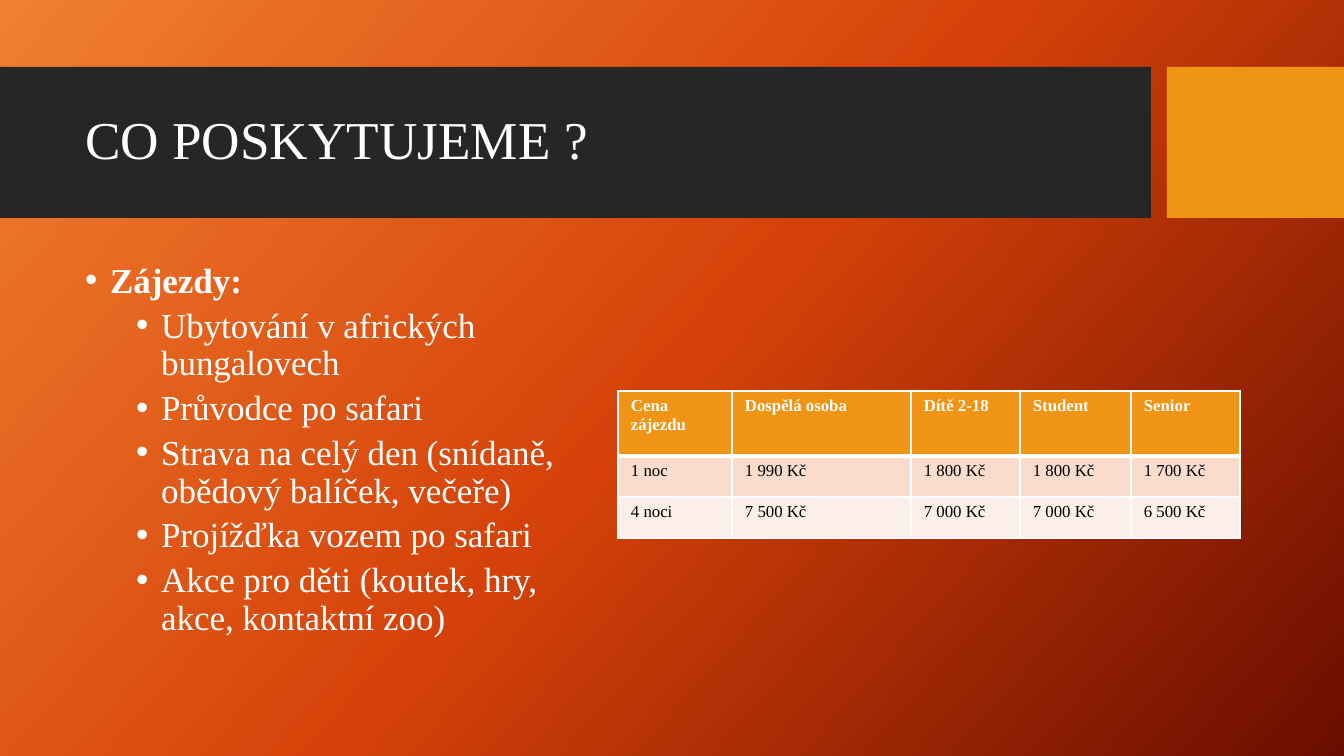
from copy import deepcopy

from lxml import etree
from pptx import Presentation
from pptx.dml.color import RGBColor
from pptx.enum.shapes import MSO_SHAPE
from pptx.enum.text import MSO_ANCHOR, MSO_AUTO_SIZE, PP_ALIGN
from pptx.oxml.ns import qn
from pptx.util import Pt

RECTANGLE = MSO_SHAPE.RECTANGLE
MIDDLE, TOP = MSO_ANCHOR.MIDDLE, MSO_ANCHOR.TOP
LEFT = PP_ALIGN.LEFT
NO_FIT = MSO_AUTO_SIZE.NONE

EMU_PER_PX = 914400 / 100.8
FONT = "Times New Roman"
WHITE, BLACK, ORANGE, CHARCOAL = "FFFFFF", "000000", "F09415", "262626"


def px(*lengths):
    emu = [round(length * EMU_PER_PX) for length in lengths]
    return emu if len(emu) > 1 else emu[0]


def style(paragraph, size, color, bold=False):
    paragraph.alignment = LEFT
    for run in paragraph.runs:
        run.font.name = FONT
        run.font.size = Pt(size)
        run.font.bold = bold
        run.font.color.rgb = RGBColor.from_string(color)


presentation = Presentation()
presentation.slide_width, presentation.slide_height = px(1344, 756)
slide = presentation.slides.add_slide(presentation.slide_layouts[1])

# Background gradient
background = slide.background.fill
background.gradient()
background.gradient_angle = 360 - 42
stop_list = slide.element.find(".//" + qn("a:gsLst"))
stop_list.append(deepcopy(stop_list[0]))
gradient = [(0, "F18031"), (0.5, "D54209"), (1, "6A0D00")]
for stop, (position, color) in zip(background.gradient_stops, gradient):
    stop.position = position
    stop.color.rgb = RGBColor.from_string(color)

# Title band and accent block, placed behind the text
for index, (left, width, color) in enumerate([(0, 1151, CHARCOAL), (1167, 177, ORANGE)]):
    band = slide.shapes.add_shape(RECTANGLE, *px(left, 67, width, 151))
    band.shadow.inherit = False
    band.fill.solid()
    band.fill.fore_color.rgb = RGBColor.from_string(color)
    band.line.fill.background()
    slide.shapes.element.insert(2 + index, band.element)

# Title
title = slide.shapes.title
title.left, title.top, title.width, title.height = px(75, 83, 1059, 119)
title.text_frame.text = "CO POSKYTUJEME ?"
title.text_frame.vertical_anchor = MIDDLE
title.text_frame.auto_size = NO_FIT
title.text_frame.paragraphs[0].line_spacing = 0.9
style(title.text_frame.paragraphs[0], 38, WHITE)

# List of what the trips include
trip_lines = [
    "Zájezdy:",
    "Ubytování v afrických bungalovech",
    "Průvodce po safari",
    "Strava na celý den (snídaně, obědový balíček, večeře)",
    "Projížďka vozem po safari",
    "Akce pro děti (koutek, hry, akce, kontaktní zoo)",
]
body = slide.placeholders[1]
body.left, body.top, body.width, body.height = px(75, 258, 506, 435)
body.text_frame.text = "\n".join(trip_lines)
body.text_frame.vertical_anchor = TOP
body.text_frame.auto_size = NO_FIT
for index, paragraph in enumerate(body.text_frame.paragraphs):
    is_heading = index == 0
    paragraph.level = 0 if is_heading else 1
    paragraph.line_spacing = 0.9
    paragraph.space_before = Pt(0 if is_heading else 5)
    properties = paragraph._p.get_or_add_pPr()
    properties.set("marL", str(px(25 if is_heading else 76)))
    properties.set("indent", str(px(-25)))
    etree.SubElement(properties, qn("a:buFont"), typeface="Arial")
    etree.SubElement(properties, qn("a:buChar"), char="•")
    style(paragraph, 25, WHITE, is_heading)

# Price table
prices = [
    ["Cena\nzájezdu", "Dospělá osoba", "Dítě 2-18", "Student", "Senior"],
    ["1 noc", "1 990 Kč", "1 800 Kč", "1 800 Kč", "1 700 Kč"],
    ["4 noci", "7 500 Kč", "7 000 Kč", "7 000 Kč", "6 500 Kč"],
]
column_widths = [114, 179, 109, 111, 109]
row_heights = [65, 41, 41]
row_fills = [ORANGE, "F9DCCC", "FCEEE8"]
table = slide.shapes.add_table(
    len(prices), len(column_widths),
    *px(618, 391, sum(column_widths), sum(row_heights))).table
for column, width in zip(table.columns, column_widths):
    column.width = px(width)
for row_index, row in enumerate(table.rows):
    is_header = row_index == 0
    row.height = px(row_heights[row_index])
    for cell, text in zip(row.cells, prices[row_index]):
        cell.text_frame.text = text
        cell.margin_left = cell.margin_right = px(13)
        cell.margin_top = cell.margin_bottom = px(6)
        cell.vertical_anchor = TOP
        # White borders, thick below the header
        borders = {"L": 1, "R": 1, "T": 3 if row_index == 1 else 1, "B": 3 if is_header else 1}
        for side, points in borders.items():
            border = etree.SubElement(cell._tc.get_or_add_tcPr(), qn("a:ln" + side), w=str(Pt(points)))
            border_fill = etree.SubElement(border, qn("a:solidFill"))
            etree.SubElement(border_fill, qn("a:srgbClr"), val=WHITE)
        cell.fill.solid()
        cell.fill.fore_color.rgb = RGBColor.from_string(row_fills[row_index])
        for paragraph in cell.text_frame.paragraphs:
            style(paragraph, 12, WHITE if is_header else BLACK, is_header)

presentation.save("out.pptx")
